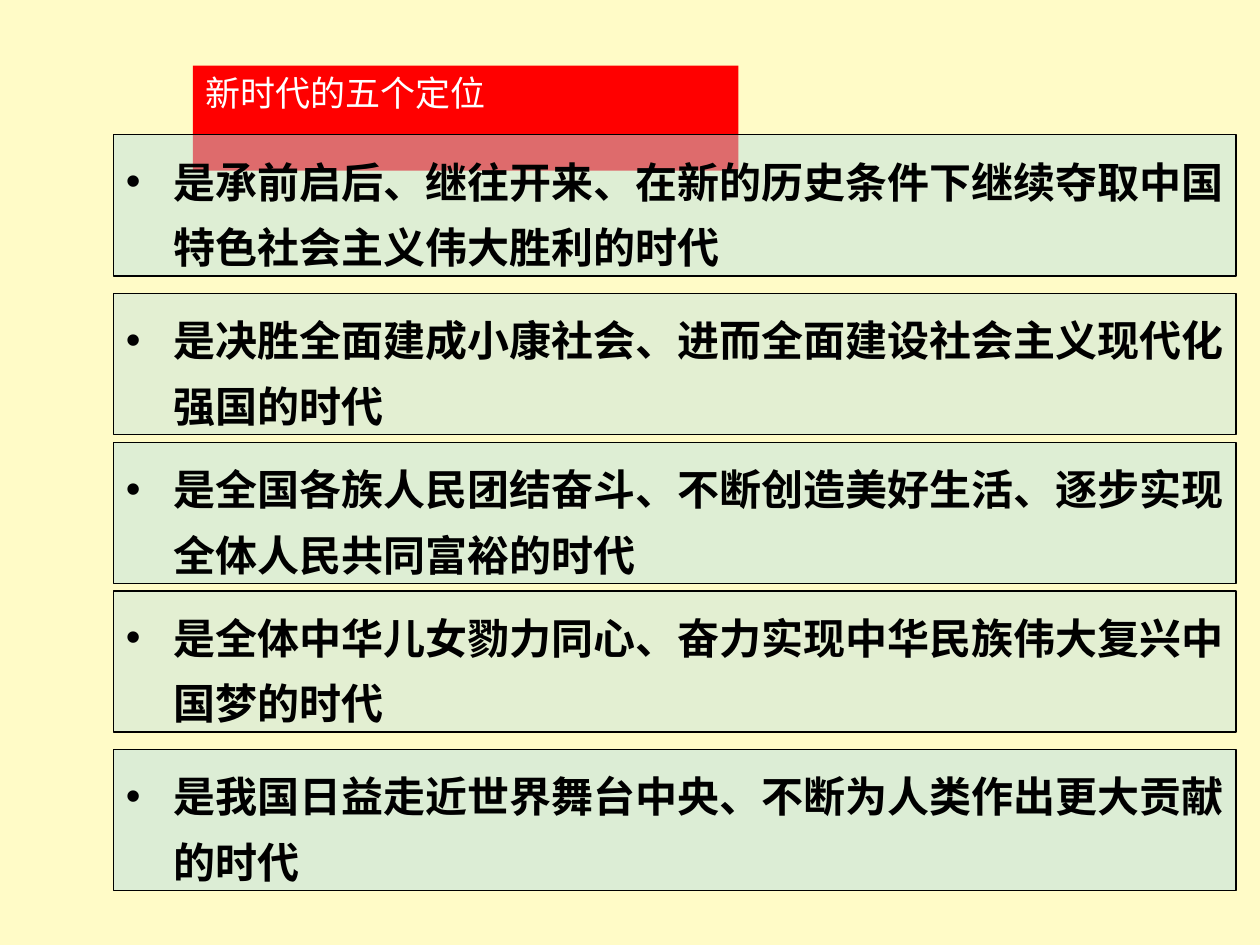
from dataclasses import dataclass

from lxml.etree import SubElement
from pptx import Presentation
from pptx.dml.color import RGBColor
from pptx.enum.shapes import MSO_SHAPE
from pptx.enum.text import MSO_ANCHOR, MSO_AUTO_SIZE, PP_ALIGN
from pptx.oxml.ns import qn
from pptx.slide import Slide
from pptx.util import Inches, Pt


@dataclass(frozen=True)
class Theme:
    background: RGBColor = RGBColor(0xFF, 0xFB, 0xC7)
    banner: RGBColor = RGBColor(0xFF, 0x00, 0x00)
    panel: RGBColor = RGBColor(0xBB, 0xE0, 0xE3)
    ink: RGBColor = RGBColor(0x00, 0x00, 0x00)
    light: RGBColor = RGBColor(0xFF, 0xFF, 0xFF)
    latin: str = "Arial"
    cjk: str = "Noto Sans CJK SC"
    title_size: Pt = Pt(20)
    body_size: Pt = Pt(24)
    outline: Pt = Pt(0.75)


@dataclass(frozen=True)
class Position:
    text: str
    top: float
    opacity: int
    font: str


THEME = Theme()
PANEL_LEFT, PANEL_WIDTH, PANEL_HEIGHT = 0.9, 8.91, 1.12
INDENT = Inches(0.38)
TITLE = "新时代的五个定位"
POSITIONS = [
    Position("是承前启后、继往开来、在新的历史条件下继续夺取中国特色社会主义伟大胜利的时代",
             1.07, 48, THEME.cjk),
    Position("是决胜全面建成小康社会、进而全面建设社会主义现代化强国的时代",
             2.33, 41, THEME.latin),
    Position("是全国各族人民团结奋斗、不断创造美好生活、逐步实现全体人民共同富裕的时代",
             3.51, 48, THEME.latin),
    Position("是全体中华儿女勠力同心、奋力实现中华民族伟大复兴中国梦的时代",
             4.69, 41, THEME.cjk),
    Position("是我国日益走近世界舞台中央、不断为人类作出更大贡献的时代",
             5.95, 51, THEME.cjk),
]


def add_title(slide: Slide, text: str) -> None:
    sp = slide.shapes.title
    sp.left, sp.top, sp.width, sp.height = map(Inches, (1.53, 0.52, 4.33, 0.43))
    sp.fill.solid()
    sp.fill.fore_color.rgb = THEME.banner
    tf = sp.text_frame
    tf.text = text
    tf.auto_size = MSO_AUTO_SIZE.SHAPE_TO_FIT_TEXT
    tf.vertical_anchor = MSO_ANCHOR.TOP
    p = tf.paragraphs[0]
    p.alignment = PP_ALIGN.LEFT
    p.font.name = THEME.latin
    p.font.size = THEME.title_size
    p.font.color.rgb = THEME.light


def add_position(slide: Slide, position: Position) -> None:
    """Draw one outlined, translucent panel with its bulleted statement."""
    sp = slide.shapes.add_shape(
        MSO_SHAPE.RECTANGLE, Inches(PANEL_LEFT), Inches(position.top),
        Inches(PANEL_WIDTH), Inches(PANEL_HEIGHT))
    sp.shadow.inherit = False
    sp.fill.solid()
    sp.fill.fore_color.rgb = THEME.panel
    color = sp.fill._xPr.find(qn("a:solidFill"))[0]
    SubElement(color, qn("a:alpha"), val=str(position.opacity * 1000))
    sp.line.color.rgb = THEME.ink
    sp.line.width = THEME.outline

    tf = sp.text_frame
    tf.word_wrap = True
    tf.vertical_anchor = MSO_ANCHOR.TOP
    tf.text = position.text
    p = tf.paragraphs[0]
    p.alignment = PP_ALIGN.LEFT
    p.line_spacing = 1.3
    props = p._p.get_or_add_pPr()
    props.set("marL", str(INDENT))
    props.set("indent", str(-INDENT))
    SubElement(props, qn("a:buFont"), typeface=THEME.latin)
    SubElement(props, qn("a:buChar"), char="•")
    p.font.name = position.font
    p.font.size = THEME.body_size
    p.font.bold = True
    p.font.color.rgb = THEME.ink


def main() -> None:
    prs = Presentation()
    prs.slide_width, prs.slide_height = Inches(10), Inches(7.5)
    slide = prs.slides.add_slide(prs.slide_layouts.get_by_name("Title Only"))
    fill = slide.background.fill
    fill.solid()
    fill.fore_color.rgb = THEME.background
    add_title(slide, TITLE)
    for position in POSITIONS:
        add_position(slide, position)
    prs.save("out.pptx")


if __name__ == "__main__":
    main()
